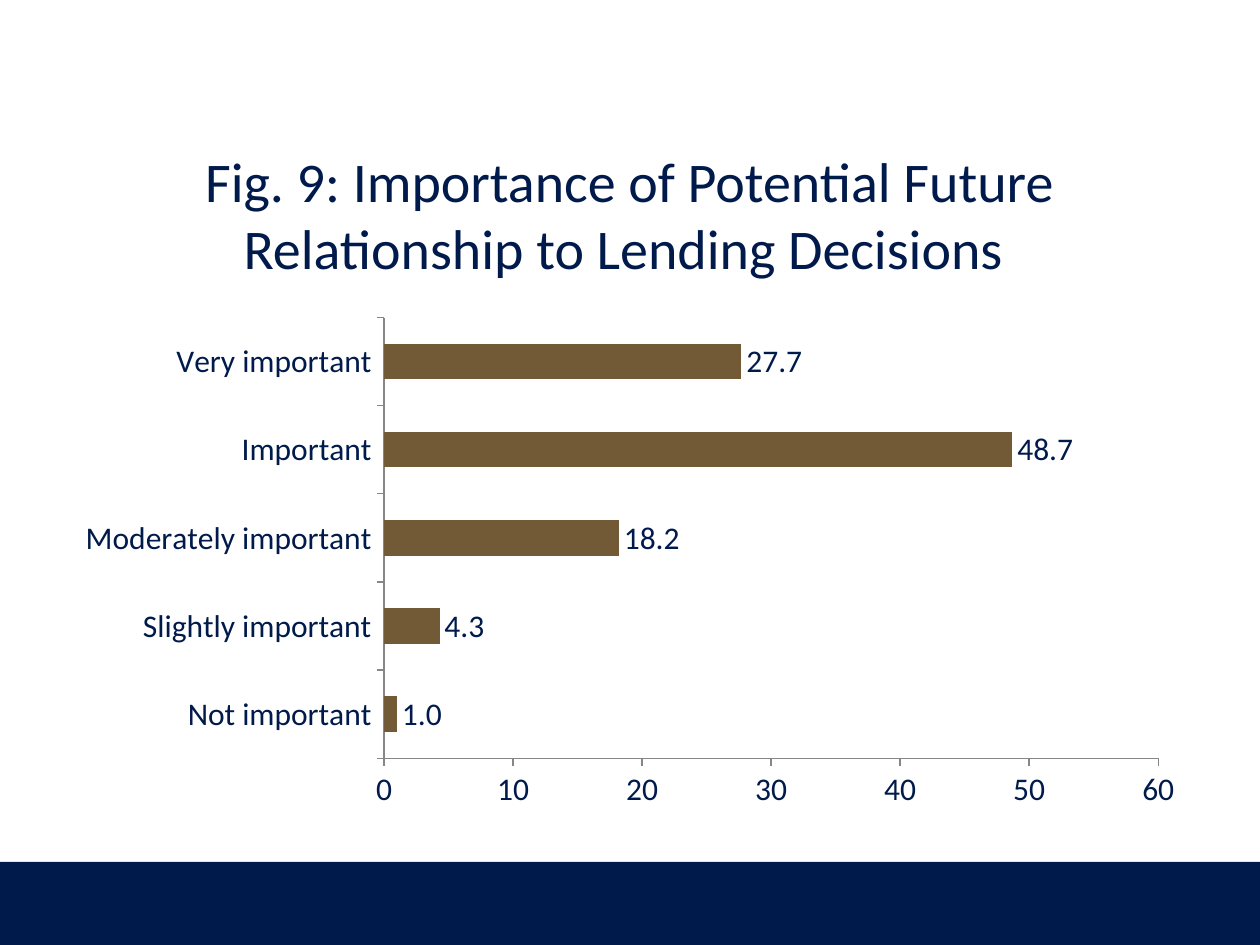
"""Build the Fig. 9 slide: a bar chart of lending decision factors."""
from pptx import Presentation
from pptx import util as u
from pptx.chart.data import CategoryChartData
from pptx.dml.color import RGBColor
from pptx.enum import chart, shapes, text

NAVY = RGBColor(0x00, 0x1A, 0x4B)
BROWN = RGBColor(0x71, 0x5A, 0x35)
GRAY = RGBColor(0x86, 0x86, 0x86)
FONT = {"name": "Calibri", "bold": False}
RATINGS = {
    "Not important": 1,
    "Slightly important": 4.3,
    "Moderately important": 18.2,
    "Important": 48.7,
    "Very important": 27.7,
}

prs = Presentation()
prs.slide_width, prs.slide_height = u.Inches(10), u.Inches(7.5)
W, H = prs.slide_width, prs.slide_height
MARGIN = int(W * 0.05)
BODY = W - 2 * MARGIN
s = prs.slides.add_slide(prs.slide_layouts[6])


def set_font(font, size):
    for key, value in {**FONT, "size": u.Pt(size)}.items():
        setattr(font, key, value)
    font.color.rgb = NAVY


footer_top = u.Inches(6.84)
sp = s.shapes.add_shape(shapes.MSO_SHAPE.RECTANGLE, 0, footer_top, W, H - footer_top)
sp.shadow.inherit = False
sp.fill.solid()
sp.fill.fore_color.rgb = NAVY
sp.line.fill.background()

title = s.shapes.add_textbox(MARGIN, u.Inches(1.07), BODY, u.Inches(1.25))
tf = title.text_frame
for key, value in {"word_wrap": True, "vertical_anchor": text.MSO_ANCHOR.MIDDLE}.items():
    setattr(tf, key, value)
p = tf.paragraphs[0]
p.alignment = text.PP_ALIGN.CENTER
r = p.add_run()
r.text = "Fig. 9: Importance of Potential Future Relationship to Lending Decisions "
set_font(r.font, 32)

data = CategoryChartData(number_format="#,##0.0")
data.categories = list(RATINGS)
data.add_series("Series 1", list(RATINGS.values()))
ch = s.shapes.add_chart(chart.XL_CHART_TYPE.BAR_CLUSTERED, MARGIN, u.Inches(2.44),
                        BODY, u.Inches(4.06), data).chart
ch.has_legend = ch.has_title = False
set_font(ch.font, 18)

plot = ch.plots[0]
for key, value in {"gap_width": 150, "vary_by_categories": False, "has_data_labels": True}.items():
    setattr(plot, key, value)
labels = {
    "show_value": True,
    "number_format": "#,##0.0",
    "number_format_is_linked": False,
    "position": chart.XL_LABEL_POSITION.OUTSIDE_END,
}
for key, value in labels.items():
    setattr(plot.data_labels, key, value)
bars = plot.series[0].format.fill
bars.solid()
bars.fore_color.rgb = BROWN

for axis in (ch.category_axis, ch.value_axis):
    axis.has_major_gridlines = False
    axis.major_tick_mark = chart.XL_TICK_MARK.OUTSIDE
    axis.minor_tick_mark = chart.XL_TICK_MARK.NONE
    axis.format.line.color.rgb = GRAY
    axis.format.line.width = u.Pt(0.75)
scale = {"minimum_scale": 0, "maximum_scale": 60, "major_unit": 10}
for key, value in scale.items():
    setattr(ch.value_axis, key, value)
for key, value in {"number_format": "0", "number_format_is_linked": False}.items():
    setattr(ch.value_axis.tick_labels, key, value)

prs.save("out.pptx")
